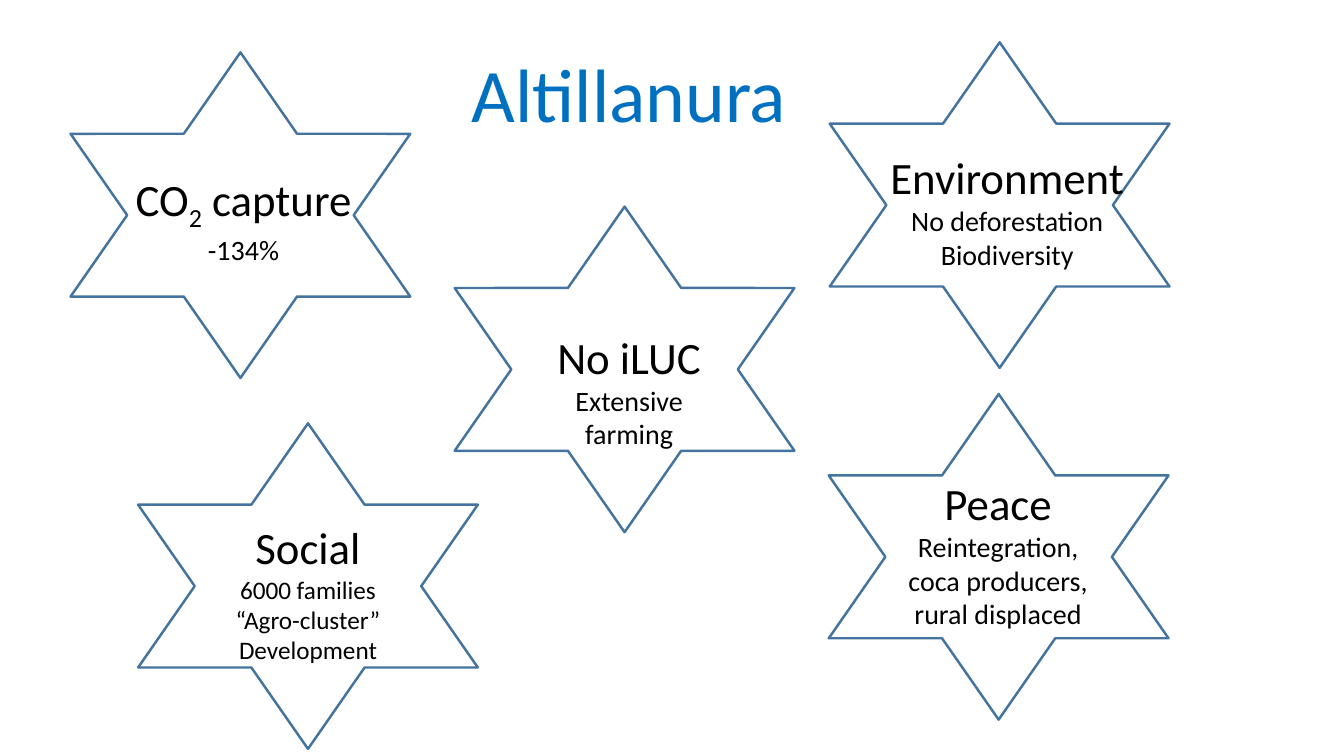
from pptx import Presentation
from pptx.dml.color import RGBColor
from pptx.enum.shapes import MSO_SHAPE
from pptx.enum.text import MSO_ANCHOR, MSO_AUTO_SIZE, PP_ALIGN
from pptx.util import Pt

PX = 9144  # 100 px to the inch
COLORS = {"title": "0070C0", "text": "000000", "outline": "43739E"}
STAR_W, STAR_H = 337, 323

# Star corner, label box relative to the star, heading, detail size, details
STARS = [
    ((70, 52), (52, 113, 239, 98), ["CO", "2", " capture"], 20, ["-134%"]),
    ((823, 42), (49, 102, 254, 131), ["Environment"], 20,
     ["No deforestation", "Biodiversity"]),
    ((451, 205), (77, 117, 192, 131), ["No iLUC"], 20, ["Extensive farming"]),
    ((137, 420), (86, 91, 165, 155), ["Social"], 18,
     ["6000 families", "“Agro-cluster”", "Development"]),
    ((822, 391), (68, 76, 200, 165), ["Peace"], 20,
     ["Reintegration,", "coca producers,", "rural displaced"]),
]


def emu(*lengths):
    return [n * PX for n in lengths]


def add_text(p, text, size, color="text", subscript=False):
    p.alignment = PP_ALIGN.CENTER
    r = p.add_run()
    r.text = text
    r.font.name = "Calibri"
    r.font.size = Pt(size)
    r.font.color.rgb = RGBColor.from_string(COLORS[color])
    if subscript:
        r._r.get_or_add_rPr().set("baseline", "-25000")


def add_title(slide, left, top, width, height):
    title = slide.shapes.title
    title.left, title.top, title.width, title.height = emu(left, top, width, height)
    tf = title.text_frame
    tf.auto_size = MSO_AUTO_SIZE.NONE
    tf.vertical_anchor = MSO_ANCHOR.TOP
    add_text(tf.paragraphs[0], "Altillanura", 54, color="title")


def add_star(slide, corner, label_box, heading, detail_size, details):
    left, top = corner
    star = slide.shapes.add_shape(MSO_SHAPE.STAR_6_POINT,
                                  *emu(left, top, STAR_W, STAR_H))
    star.shadow.inherit = False
    star.fill.background()
    star.line.color.rgb = RGBColor.from_string(COLORS["outline"])
    star.line.width = Pt(1.75)

    dx, dy, width, height = label_box
    label = slide.shapes.add_textbox(*emu(left + dx, top + dy, width, height))
    tf = label.text_frame
    tf.word_wrap = heading == ["No iLUC"]
    tf.auto_size = MSO_AUTO_SIZE.SHAPE_TO_FIT_TEXT
    for part in heading:
        add_text(tf.paragraphs[0], part, 32, subscript=part == "2")
    for detail in details:
        add_text(tf.add_paragraph(), detail, detail_size)


def main():
    prs = Presentation()
    prs.slide_width, prs.slide_height = emu(1333, 750)
    slide = prs.slides.add_slide(prs.slide_layouts[5])
    add_title(slide, 456, 42, 336, 101)
    for star in STARS:
        add_star(slide, *star)
    prs.save("out.pptx")


if __name__ == "__main__":
    main()
